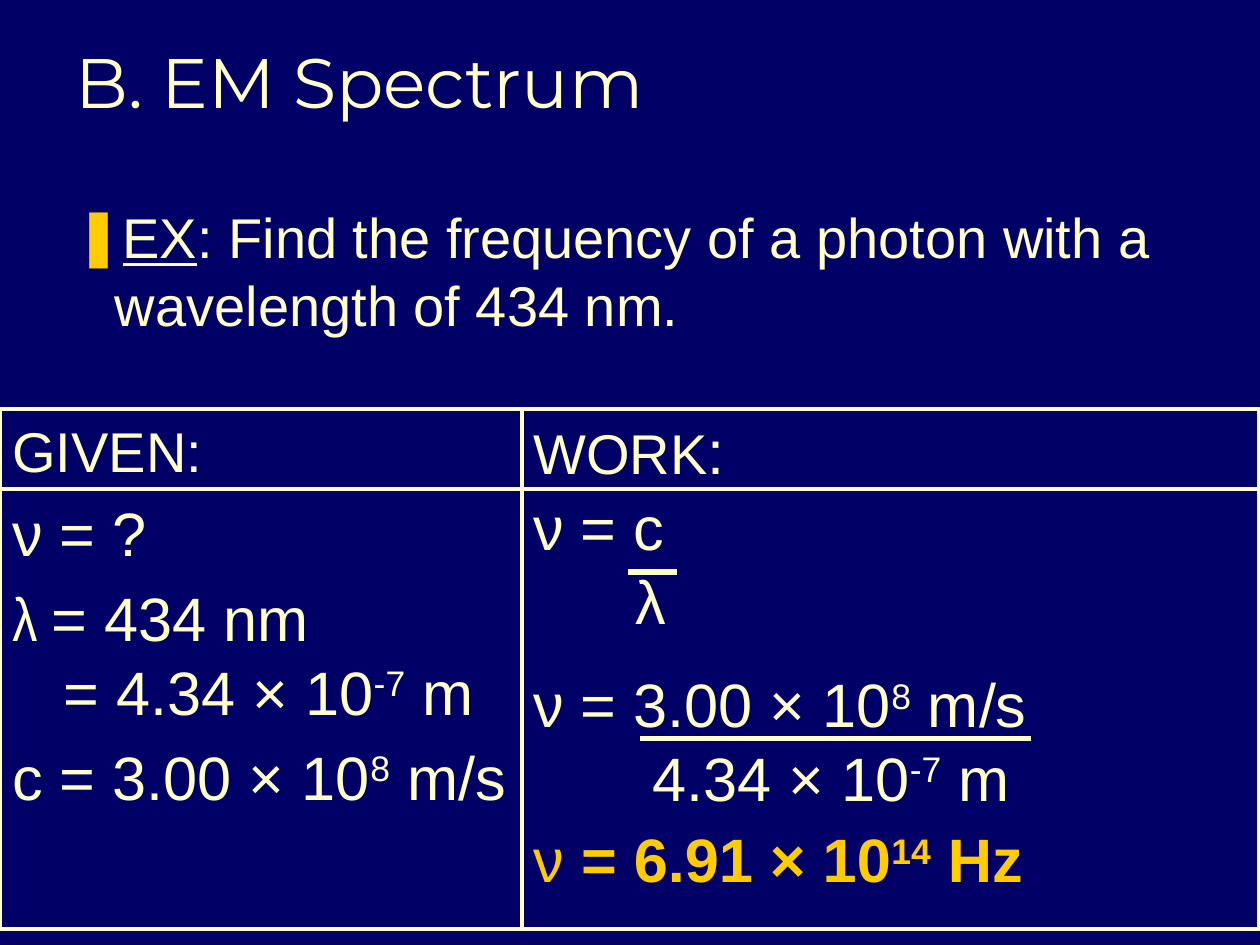
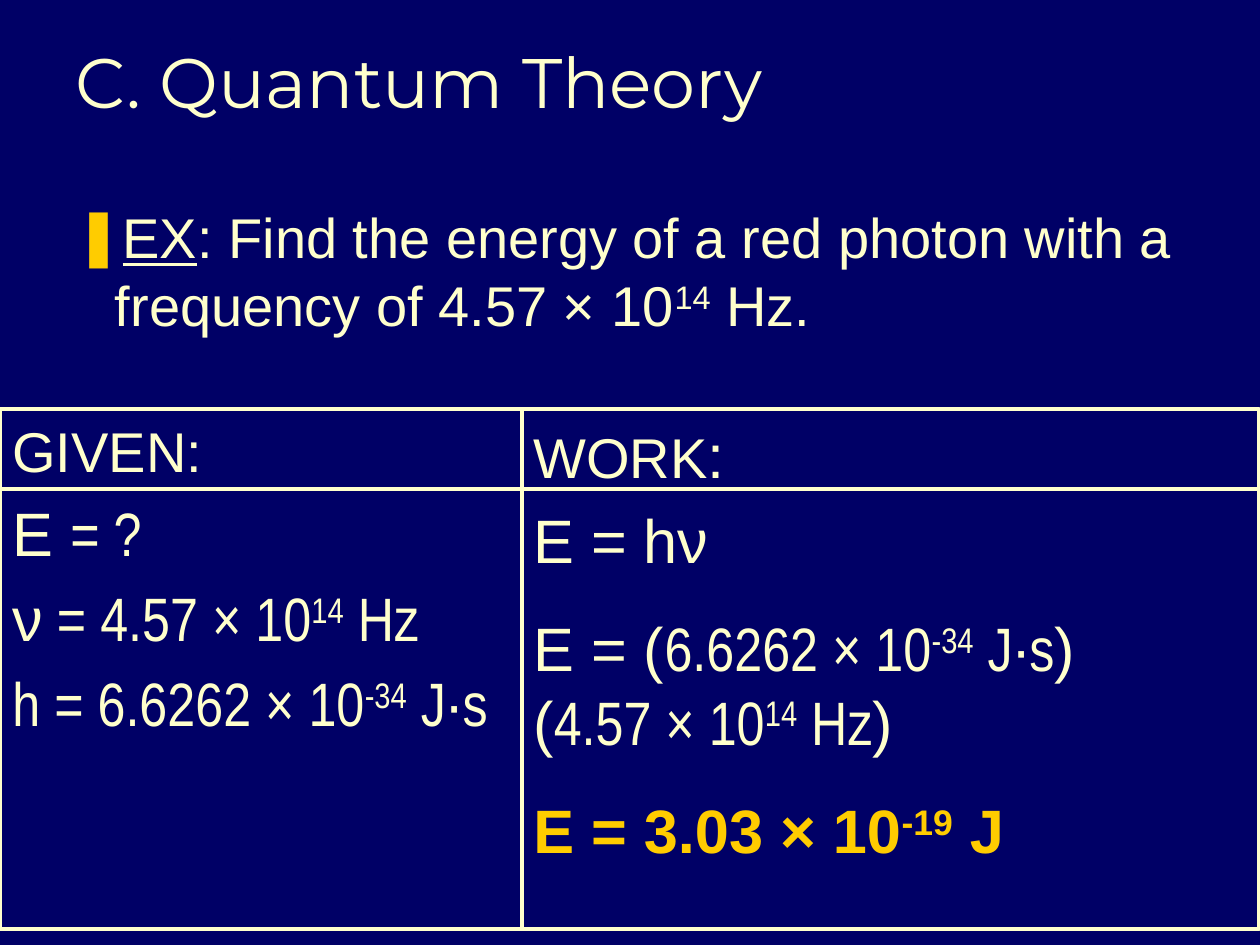
from dataclasses import dataclass
from lxml import etree
from pptx import Presentation
from pptx.dml.color import RGBColor
from pptx.enum import shapes, text
from pptx.oxml import ns
from pptx.util import Pt

NAVY, CREAM, GOLD = "000066", "FFFFCC", "FFCC00"
HEADING, BODY, NARROW = "Montserrat", "Arial", "Arial Narrow"
LABEL_SIZE, MATH_SIZE = 32, 35

# Worksheet grid shared by both slides, in points
GRID_TOP, GRID_BOTTOM, HEADER_BOTTOM = 234, 531, 279.4
GRID_WIDTH, WORK_LEFT = 719.3, 297.7
WORK_WIDTH = 422.6
SMALL_GAP, LARGE_GAP = 6.5, 20


@dataclass
class Run:
    words: str
    size: float = MATH_SIZE
    font: str = BODY
    color: str = CREAM
    bold: bool = False
    underline: bool = False
    raised: bool = False


@dataclass
class Line:
    runs: list
    before: float = SMALL_GAP
    indent: float = 0


def power(base, exponent, unit, **style):
    """Runs for a number in scientific notation with its unit."""
    return [Run(base, **style), Run(exponent, raised=True, **style),
            Run(unit, **style)]


def rgb(color):
    return RGBColor.from_string(color)


def write_runs(paragraph, runs):
    for item in runs:
        run = paragraph.add_run()
        run.text = item.words
        run.font.name = item.font
        run.font.size = Pt(item.size)
        run.font.bold = item.bold
        run.font.underline = item.underline
        run.font.color.rgb = rgb(item.color)
        if item.raised:
            run._r.get_or_add_rPr().set("baseline", "30000")


def place(holder, left, top, width, height, anchor):
    holder.left, holder.top = Pt(left), Pt(top)
    holder.width, holder.height = Pt(width), Pt(height)
    frame = holder.text_frame
    frame.word_wrap = True
    frame.auto_size = text.MSO_AUTO_SIZE.NONE
    frame.vertical_anchor = anchor
    return frame.paragraphs[0]


def add_title(slide, words):
    heading = place(slide.shapes.title, 36, 11.5, 607.7, 62,
                    text.MSO_ANCHOR.BOTTOM)
    heading.alignment = text.PP_ALIGN.LEFT
    write_runs(heading, [Run(words, 40, HEADING)])


def add_question(slide, runs):
    question = place(slide.placeholders[1], 36, 112.3, 643.7, 100,
                     text.MSO_ANCHOR.TOP)
    question.space_before = Pt(0)
    props = question._p.get_or_add_pPr()
    props.set("marL", str(Pt(22.5)))
    props.set("indent", str(-Pt(22.5)))
    bullet_color = etree.SubElement(props, ns.qn("a:buClr"))
    etree.SubElement(bullet_color, ns.qn("a:srgbClr")).set("val", GOLD)
    etree.SubElement(props, ns.qn("a:buChar")).set("char", "❚")
    write_runs(question, [Run("EX", LABEL_SIZE, underline=True)] + runs)


def add_lines(slide, left, top, width, height, lines):
    box = slide.shapes.add_textbox(Pt(left), Pt(top), Pt(width), Pt(height))
    frame = box.text_frame
    frame.word_wrap = True
    for index, line in enumerate(lines):
        paragraph = frame.add_paragraph() if index else frame.paragraphs[0]
        paragraph.space_before = Pt(line.before if index else 0)
        if line.indent:
            paragraph._p.get_or_add_pPr().set("marL", str(Pt(line.indent)))
        write_runs(paragraph, line.runs)


def add_rule(slide, x1, y1, x2, y2, weight=2.25):
    rule = slide.shapes.add_connector(
        shapes.MSO_CONNECTOR.STRAIGHT, Pt(x1), Pt(y1), Pt(x2), Pt(y2))
    rule.line.color.rgb = rgb(CREAM)
    rule.line.width = Pt(weight)
    etree.SubElement(rule._element.spPr, ns.qn("a:effectLst"))


def add_grid(slide):
    frame = slide.shapes.add_shape(
        shapes.MSO_SHAPE.RECTANGLE, 0, Pt(GRID_TOP), Pt(GRID_WIDTH),
        Pt(GRID_BOTTOM - GRID_TOP))
    frame.shadow.inherit = False
    frame.fill.background()
    frame.line.color.rgb = rgb(CREAM)
    frame.line.width = Pt(2.25)
    add_rule(slide, WORK_LEFT + 0.4, GRID_TOP, WORK_LEFT + 0.4, GRID_BOTTOM)
    add_rule(slide, 0, HEADER_BOTTOM, 720, HEADER_BOTTOM)


def add_given(slide, lines):
    label = Line([Run("GIVEN:", LABEL_SIZE)])
    add_lines(slide, 0, 234.7, WORK_LEFT, 204.5, [label] + lines)


def add_work(slide, top, lines):
    label = Line([Run("WORK", LABEL_SIZE), Run(":")])
    add_lines(slide, WORK_LEFT, top, WORK_WIDTH, 278, [label] + lines)


def add_problem(prs, title, question):
    slide = prs.slides.add_slide(prs.slide_layouts[1])
    add_title(slide, title)
    add_question(slide, question)
    add_grid(slide)
    return slide


def spectrum_slide(prs):
    slide = add_problem(prs, "B. EM Spectrum", [
        Run(": Find the frequency of a photon with a wavelength of 434 nm.",
            LABEL_SIZE)])
    add_given(slide, [
        Line([Run("ν = ?")]),
        Line([Run("λ ", font=NARROW), Run("= 434 nm")]),
        Line(power("= 4.34 × 10", "-7", " m"), before=0, indent=29.2),
        Line(power("c = 3.00 × 10", "8", " m/s"))])

    # Formula, substitution and answer
    add_work(slide, 232.6, [Line([Run("ν = c")], before=1.5),
                            Line([Run("λ")], before=0, indent=58.4)])
    add_rule(slide, 358.6, 326.9, 386.6, 326.9, 3)
    add_lines(slide, WORK_LEFT, 377.3, WORK_WIDTH, 96.5, [
        Line(power("ν = 3.00 × 10", "8", " m/s")),
        Line(power("4.34 × 10", "-7", " m"), before=0, indent=68.1)])
    add_rule(slide, 365.8, 421.9, 589, 421.9, 3)
    add_lines(slide, WORK_LEFT, 465.8, WORK_WIDTH, 50.4, [
        Line([Run("ν ", color=GOLD)]
             + power("= 6.91 × 10", "14", " Hz", color=GOLD, bold=True))])


def quantum_slide(prs):
    slide = add_problem(
        prs, "C. Quantum Theory",
        power(": Find the energy of a red photon with a frequency of "
              "4.57 × 10", "14", " Hz.", size=LABEL_SIZE))
    planck = power("6.6262 × 10", "-34", " J·s", font=NARROW)
    frequency = power("4.57 × 10", "14", " Hz", font=NARROW)
    add_given(slide, [
        Line([Run("E "), Run("= ?", font=NARROW)]),
        Line([Run("ν"), Run(" = ", font=NARROW)] + frequency),
        Line([Run("h = ", font=NARROW)] + planck)])
    add_work(slide, 234.7, [
        Line([Run("E = hν")]),
        Line([Run("E = (")] + planck + [Run(")")], before=LARGE_GAP),
        Line([Run("(")] + frequency + [Run(")")], before=0),
        Line(power("E = 3.03 × 10", "-19", " J", color=GOLD, bold=True),
             before=LARGE_GAP)])


def main():
    prs = Presentation()
    prs.slide_width, prs.slide_height = Pt(720), Pt(540)
    backdrop = prs.slide_master.background.fill
    backdrop.solid()
    backdrop.fore_color.rgb = rgb(NAVY)
    spectrum_slide(prs)
    quantum_slide(prs)
    prs.save("out.pptx")


if __name__ == "__main__":
    main()
